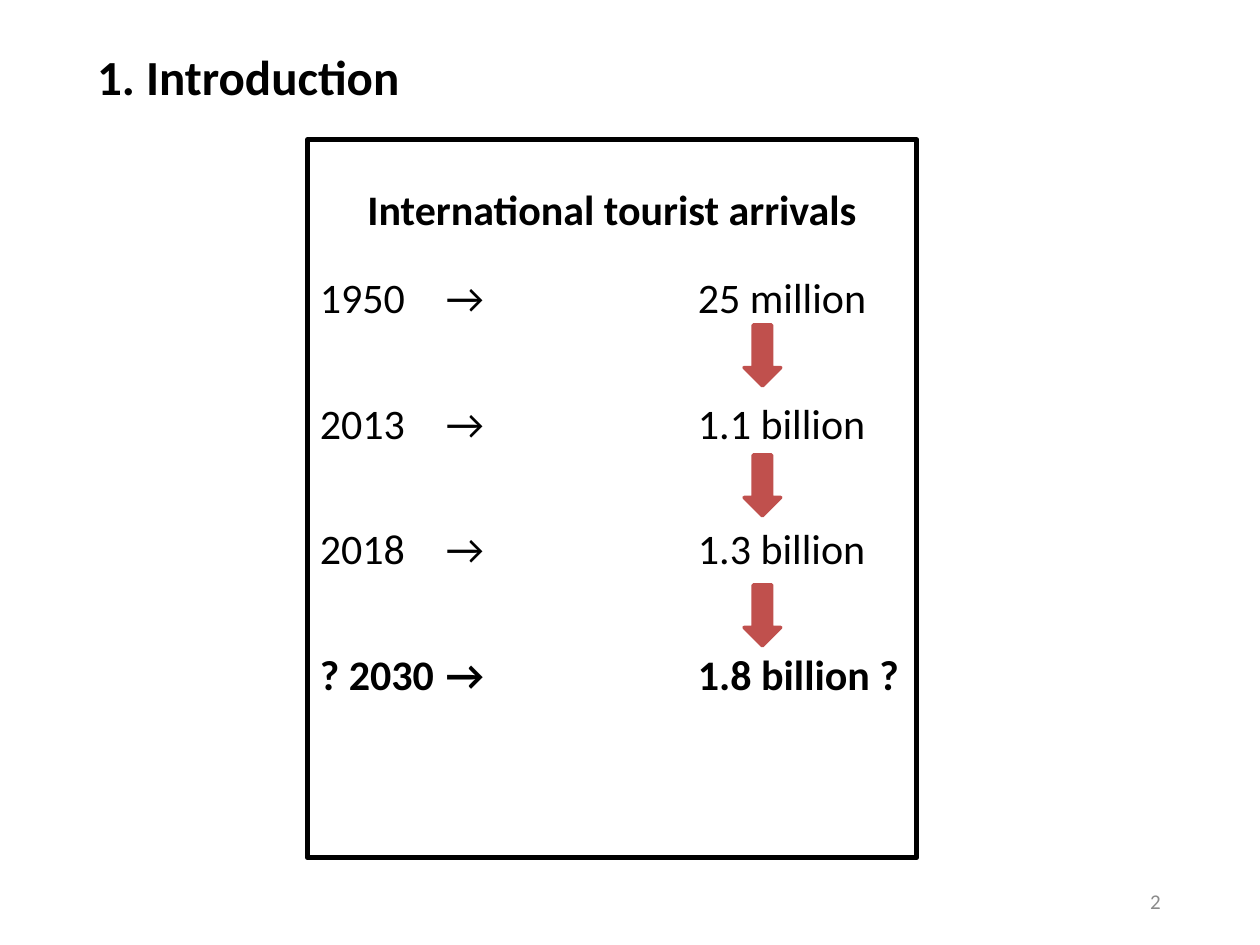
from lxml import etree
from pptx import Presentation
from pptx.dml.color import RGBColor
from pptx.enum.shapes import MSO_SHAPE
from pptx.enum.text import MSO_ANCHOR, PP_ALIGN
from pptx.oxml.ns import qn
from pptx.util import Cm, Pt

RECTANGLE, DOWN_ARROW = MSO_SHAPE.RECTANGLE, MSO_SHAPE.DOWN_ARROW
TOP, MIDDLE = MSO_ANCHOR.TOP, MSO_ANCHOR.MIDDLE
LEFT, CENTER, RIGHT = PP_ALIGN.LEFT, PP_ALIGN.CENTER, PP_ALIGN.RIGHT
BLACK, GREY, RED = "000000", "8B8B8B", "C0504D"


def color(hex_string):
    return RGBColor.from_string(hex_string)


def write(para, text, align=LEFT, hex_string=BLACK, **formats):
    para.alignment = align
    span = para.add_run()
    span.text = text
    span.font.color.rgb = color(hex_string)
    for name, value in {"name": "Calibri", **formats}.items():
        setattr(span.font, name, value)


deck = Presentation()
deck.slide_width, deck.slide_height = Cm(25.4), Cm(19.05)
page = deck.slides.add_slide(deck.slide_layouts[6])

# Framed panel with the arrivals
panel = page.shapes.add_shape(RECTANGLE, Cm(6.2), Cm(2.82), Cm(12.28), Cm(14.47))
panel.shadow.inherit = False
panel.fill.background()
panel.line.color.rgb = color(BLACK)
panel.line.width = Pt(3)
frame = panel.text_frame
frame.word_wrap = True
frame.vertical_anchor = TOP
frame.margin_top = Cm(0.88)
write(frame.paragraphs[0], "International tourist arrivals", CENTER,
      size=Pt(24), bold=True)

arrivals = [
    ("1950", "25 million", False),
    ("2013", "1.1 billion", False),
    ("2018", "1.3 billion", False),
    ("? 2030", "1.8 billion ?", True),
]
for index, (year, count, bold) in enumerate(arrivals):
    para = frame.add_paragraph()
    para.space_before = Pt(43 if index else 21.5)
    # Columns for the arrow sign and the figure
    tabs = etree.SubElement(para._p.get_or_add_pPr(), qn("a:tabLst"))
    for stop in (Cm(2.54), Cm(7.62)):
        etree.SubElement(tabs, qn("a:tab"), pos=str(int(stop)), algn="l")
    write(para, f"{year}\t→\t{count}", size=Pt(24), bold=bold)

# Arrows between the figures
for index in range(len(arrivals) - 1):
    arrow = page.shapes.add_shape(
        DOWN_ARROW, Cm(15), Cm(6.55 + 2.62 * index), Cm(0.74), Cm(1.23))
    arrow.shadow.inherit = False
    arrow.fill.solid()
    arrow.fill.fore_color.rgb = color(RED)
    arrow.line.color.rgb = color(RED)
    arrow.line.width = Pt(2)

# Heading
heading = page.shapes.add_textbox(Cm(1.71), Cm(0.81), Cm(6.6), Cm(1.45))
heading.text_frame.word_wrap = False
write(heading.text_frame.paragraphs[0], "1. Introduction", size=Pt(28), bold=True)

# Page number
number = page.shapes.add_textbox(Cm(17.93), Cm(17.65), Cm(5.72), Cm(1.02))
number.text_frame.word_wrap = True
number.text_frame.vertical_anchor = MIDDLE
write(number.text_frame.paragraphs[0], "2", RIGHT, GREY, size=Pt(12))

deck.save("out.pptx")
